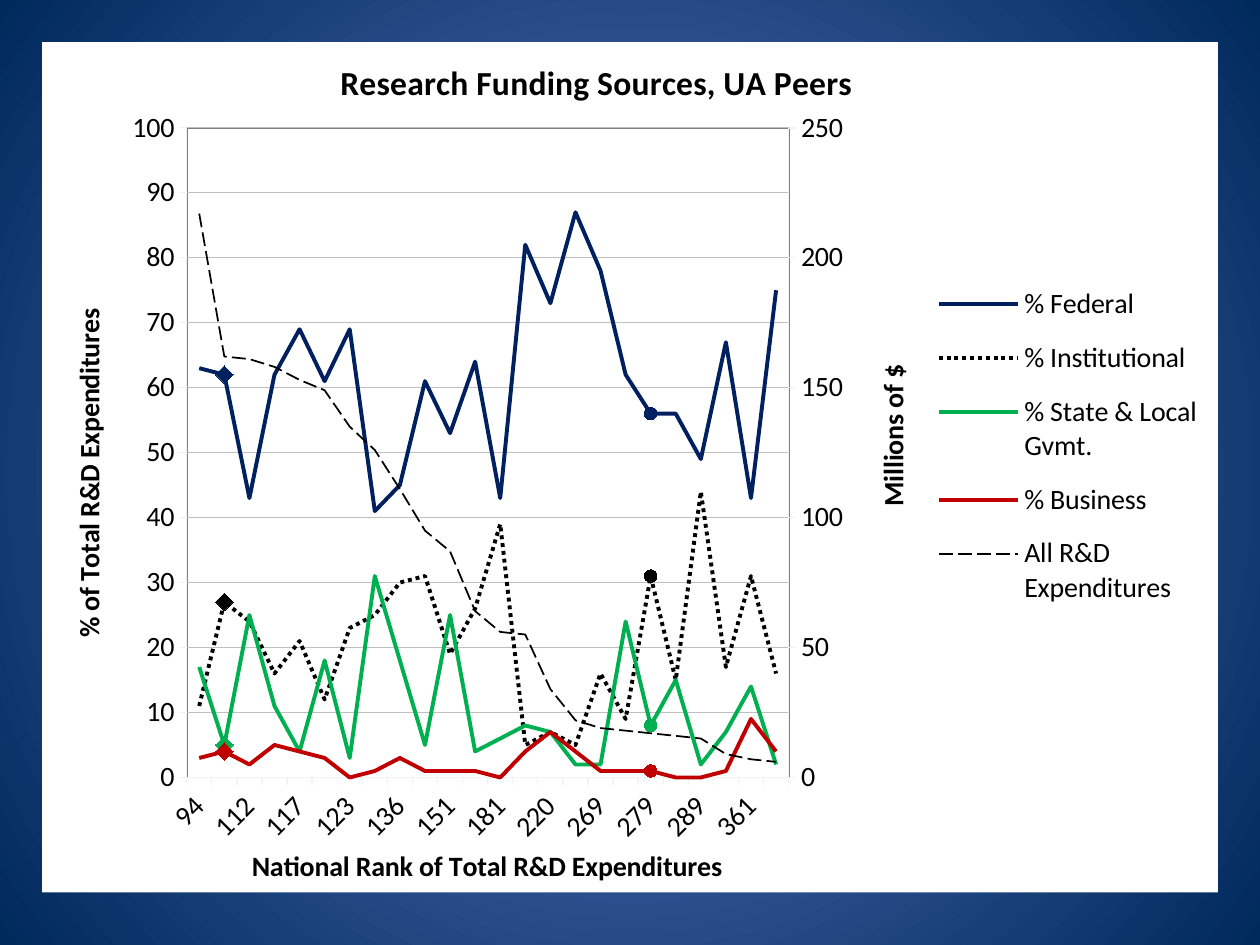
from copy import deepcopy

from pptx import Presentation
from pptx.chart.axis import CategoryAxis, ValueAxis
from pptx.chart.data import CategoryChartData
from pptx.dml.color import RGBColor
from pptx.enum.chart import XL_CHART_TYPE, XL_LEGEND_POSITION, XL_MARKER_STYLE, XL_TICK_MARK
from pptx.enum.dml import MSO_LINE
from pptx.oxml import parse_xml
from pptx.oxml.ns import nsdecls, qn
from pptx.util import Pt

FONT = "Calibri"
MARGIN, CHART_WIDTH, CHART_HEIGHT = 24, 672, 486
AXIS_COLOR = "F2F2F2"
RANKS = ["94", "111", "112", "114", "117", "118", "123", "128", "136", "146", "151", "173",
         "181", "183", "220", "257", "269", "273", "279", "280", "289", "324", "361", "370"]
# name, colour, line width, dash, values; the last series uses the right axis
SERIES = [
    ("% Federal", "002060", 2.25, None,
     [63, 62, 43, 62, 69, 61, 69, 41, 45, 61, 53, 64, 43, 82, 73, 87, 78, 62, 56, 56, 49, 67, 43, 75]),
    ("% Institutional", "000000", 2.25, MSO_LINE.ROUND_DOT,
     [11, 27, 24, 16, 21, 12, 23, 25, 30, 31, 19, 26, 39, 5, 7, 5, 16, 9, 31, 15, 44, 17, 31, 16]),
    ("% State & Local Gvmt.", "00B050", 2.25, None,
     [17, 5, 25, 11, 4, 18, 3, 31, 18, 5, 25, 4, 6, 8, 7, 2, 2, 24, 8, 15, 2, 7, 14, 2]),
    ("% Business", "C00000", 2.25, None,
     [3, 4, 2, 5, 4, 3, 0, 1, 3, 1, 1, 1, 0, 4, 7, 4, 1, 1, 1, 0, 0, 1, 9, 4]),
    ("All R&D Expenditures", "000000", 1, MSO_LINE.LONG_DASH,
     [217, 162, 161, 158, 153, 149, 135, 126, 111, 95, 87, 64, 56, 55, 34, 22, 19, 18, 17, 16, 15, 9, 7, 6]),
]
# point index, marker style, marker size
HIGHLIGHTS = [(1, XL_MARKER_STYLE.DIAMOND, 10), (18, XL_MARKER_STYLE.CIRCLE, 7)]


def color(value):
    return RGBColor.from_string(value)


def style_line(line, value, width, dash=None):
    line.color.rgb = color(value)
    line.width = Pt(width)
    if dash is not None:
        line.dash_style = dash


def fill_solid(fill, value):
    fill.solid()
    fill.fore_color.rgb = color(value)


def place(parent, left, top, width=None, height=None, after=None, inner=False):
    """Give a chart part a manual layout, in points from the chart's corner."""
    parts = [("layoutTarget", "inner")] if inner else []
    parts += [("xMode", "edge"), ("yMode", "edge"), ("x", left / CHART_WIDTH), ("y", top / CHART_HEIGHT)]
    if width is not None:
        parts += [("w", width / CHART_WIDTH), ("h", height / CHART_HEIGHT)]
    body = "".join(f'<c:{tag} val="{value}"/>' for tag, value in parts)
    layout = parse_xml(f'<c:layout {nsdecls("c")}><c:manualLayout>{body}</c:manualLayout></c:layout>')
    for old in parent.findall(qn("c:layout")):
        parent.remove(old)
    if after:
        parent.find(qn(after)).addnext(layout)
    else:
        parent.insert(0, layout)


def write_title(title, text, left, top, size=16, upright=False):
    frame = title.text_frame
    paragraph = frame.paragraphs[0]
    for run in paragraph.runs:
        paragraph._p.remove(run._r)
    run = paragraph.add_run()
    run.text = text
    run.font.name = FONT
    run.font.size = Pt(size)
    run.font.bold = True
    run.font.color.rgb = color("000000")
    if upright:
        frame._txBody.bodyPr.set("rot", "-5400000")
        frame._txBody.bodyPr.set("vert", "horz")
    place(title._element, left, top, after="c:tx")


def set_child(element, tag, value):
    element.find(qn(tag)).set("val", str(value))


def scale(axis, maximum, step):
    axis.minimum_scale = 0
    axis.maximum_scale = maximum
    axis.major_unit = step


def paint_background(slide):
    fill = slide.background.fill
    fill.gradient()
    for stop, value, position in zip(fill.gradient_stops, ("5E7CC5", "00295C"), (0, 1)):
        stop.color.rgb = color(value)
        stop.position = position
    gradient = slide._element.find(".//" + qn("a:gradFill"))
    linear = gradient.find(qn("a:lin"))
    linear.addnext(parse_xml(f'<a:path {nsdecls("a")} path="circle">'
                             '<a:fillToRect l="50000" t="50000" r="50000" b="50000"/></a:path>'))
    gradient.remove(linear)


def add_right_axis(chart):
    """Move the last series to a second line group with its own axes."""
    plot_area = chart._chartSpace.chart.plotArea
    left_group = plot_area.find(qn("c:lineChart"))
    right_group = deepcopy(left_group)
    left_group.addnext(right_group)
    left_group.remove(left_group.findall(qn("c:ser"))[-1])
    for series in right_group.findall(qn("c:ser"))[:-1]:
        right_group.remove(series)

    category = deepcopy(chart.category_axis._element)
    value = deepcopy(chart.value_axis._element)
    chart.value_axis._element.addnext(value)
    value.addnext(category)
    category_id, value_id = 50010, 50020
    for reference, number in zip(right_group.findall(qn("c:axId")), (category_id, value_id)):
        reference.set("val", str(number))
    for element, own, other in ((category, category_id, value_id), (value, value_id, category_id)):
        set_child(element, "c:axId", own)
        set_child(element, "c:crossAx", other)
    set_child(value, "c:axPos", "r")
    set_child(value, "c:crosses", "max")

    hidden_axis = CategoryAxis(category)
    hidden_axis.has_title = False
    hidden_axis.visible = False
    right_axis = ValueAxis(value)
    right_axis.has_major_gridlines = False
    scale(right_axis, 250, 50)
    write_title(right_axis.axis_title, "Millions of $", 472.5, 181.5, upright=True)


def paint_areas(chart):
    """Fill the plot area and the whole chart, the first with a border."""
    space = chart._chartSpace
    border = '<a:solidFill><a:srgbClr val="808080"/></a:solidFill>'
    for line, attach in ((border, space.chart.plotArea.append), ("<a:noFill/>", space.chart.addnext)):
        attach(parse_xml(f'<c:spPr {nsdecls("c", "a")}><a:solidFill><a:srgbClr val="FFFFFF"/></a:solidFill>'
                         f'<a:ln w="{Pt(1)}">{line}</a:ln></c:spPr>'))


def add_funding_chart(slide):
    data = CategoryChartData(number_format="0")
    data.categories = RANKS
    for name, *_, values in SERIES:
        data.add_series(name, values)
    chart = slide.shapes.add_chart(XL_CHART_TYPE.LINE, Pt(MARGIN), Pt(MARGIN),
                                   Pt(CHART_WIDTH), Pt(CHART_HEIGHT), data).chart
    chart.font.name = FONT
    chart.font.size = Pt(16)
    chart.font.color.rgb = color("000000")
    chart.plots[0].vary_by_categories = False
    write_title(chart.chart_title, "Research Funding Sources, UA Peers", 167, 6, size=19.2)

    for series, (_, value, width, dash, _) in zip(chart.plots[0].series, SERIES):
        series.smooth = False
        series.marker.style = XL_MARKER_STYLE.NONE
        style_line(series.format.line, value, width, dash)
        if series.name.startswith("%"):
            for index, style, size in HIGHLIGHTS:
                point = series.points[index]
                style_line(point.format.line, value, width, dash)
                point.marker.style = style
                point.marker.size = size
                fill_solid(point.marker.format.fill, value)
                style_line(point.marker.format.line, value, 0.75)

    ranks, percent = chart.category_axis, chart.value_axis
    for axis in (ranks, percent):
        axis.major_tick_mark = XL_TICK_MARK.OUTSIDE
        style_line(axis.format.line, AXIS_COLOR, 0.75)
    style_line(percent.major_gridlines.format.line, "BFBFBF", 0.75)
    scale(percent, 100, 10)
    percent.tick_labels.number_format = "0"
    percent.tick_labels.number_format_is_linked = False
    ranks.tick_labels.font.size = Pt(16)
    ranks._element.txPr.bodyPr.set("rot", "-2700000")
    ranks._element.find(qn("c:noMultiLvlLbl")).addprevious(
        parse_xml(f'<c:tickLblSkip {nsdecls("c")} val="2"/>'))
    write_title(ranks.axis_title, "National Rank of Total R&D Expenditures", 117, 457)
    write_title(percent.axis_title, "% of Total R&D Expenditures", 13, 149.5, upright=True)
    add_right_axis(chart)

    chart.has_legend = True
    chart.legend.position = XL_LEGEND_POSITION.RIGHT
    chart.legend.include_in_layout = False
    place(chart.legend._element, 509, 129, 154.5, 204, after="c:legendPos")
    place(chart._chartSpace.chart.plotArea, 82.7, 49.1, 344, 371.3, inner=True)
    paint_areas(chart)


def main():
    presentation = Presentation()
    presentation.slide_width, presentation.slide_height = Pt(720), Pt(540)
    slide = presentation.slides.add_slide(presentation.slide_layouts[6])
    paint_background(slide)
    add_funding_chart(slide)
    presentation.save("out.pptx")


if __name__ == "__main__":
    main()
